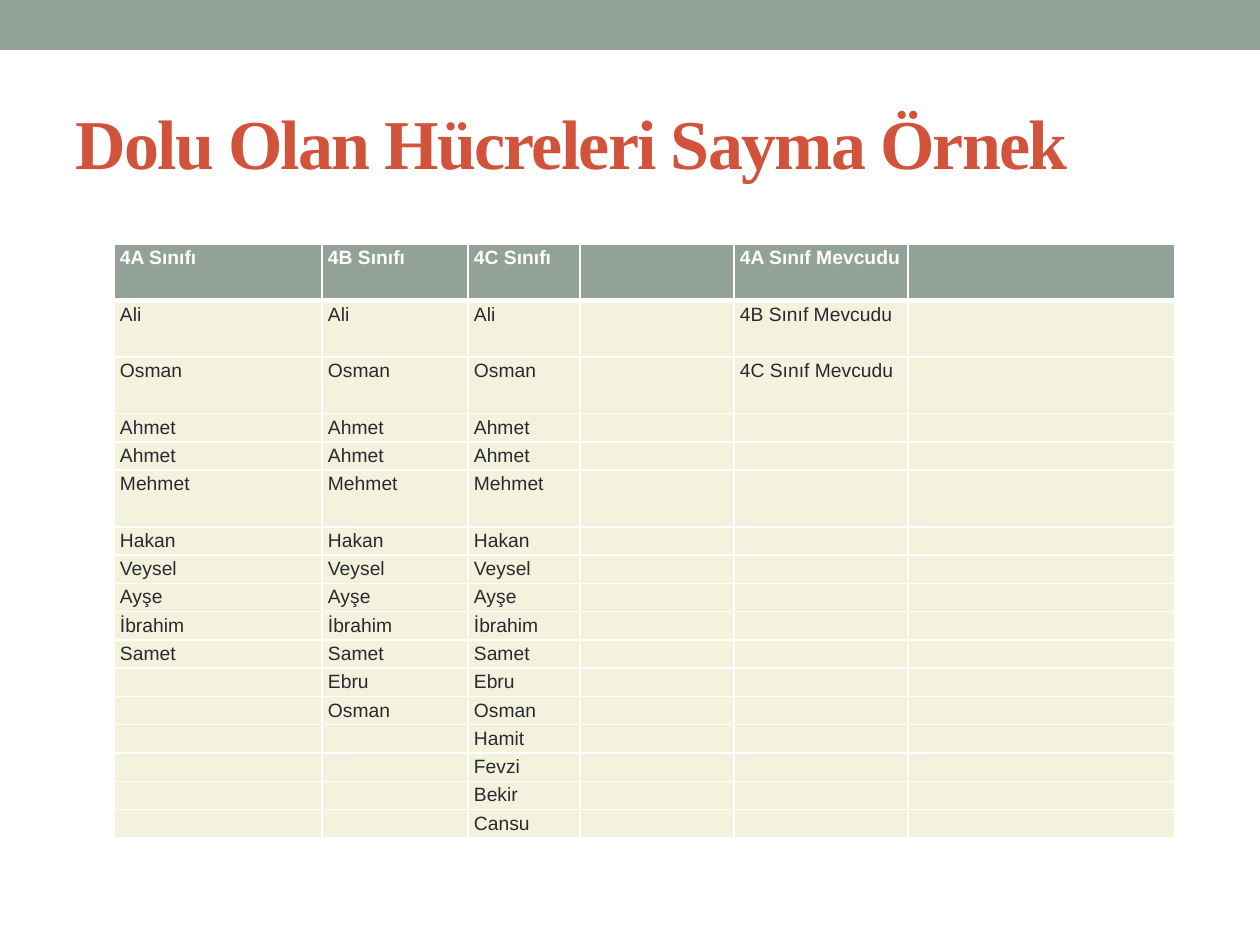
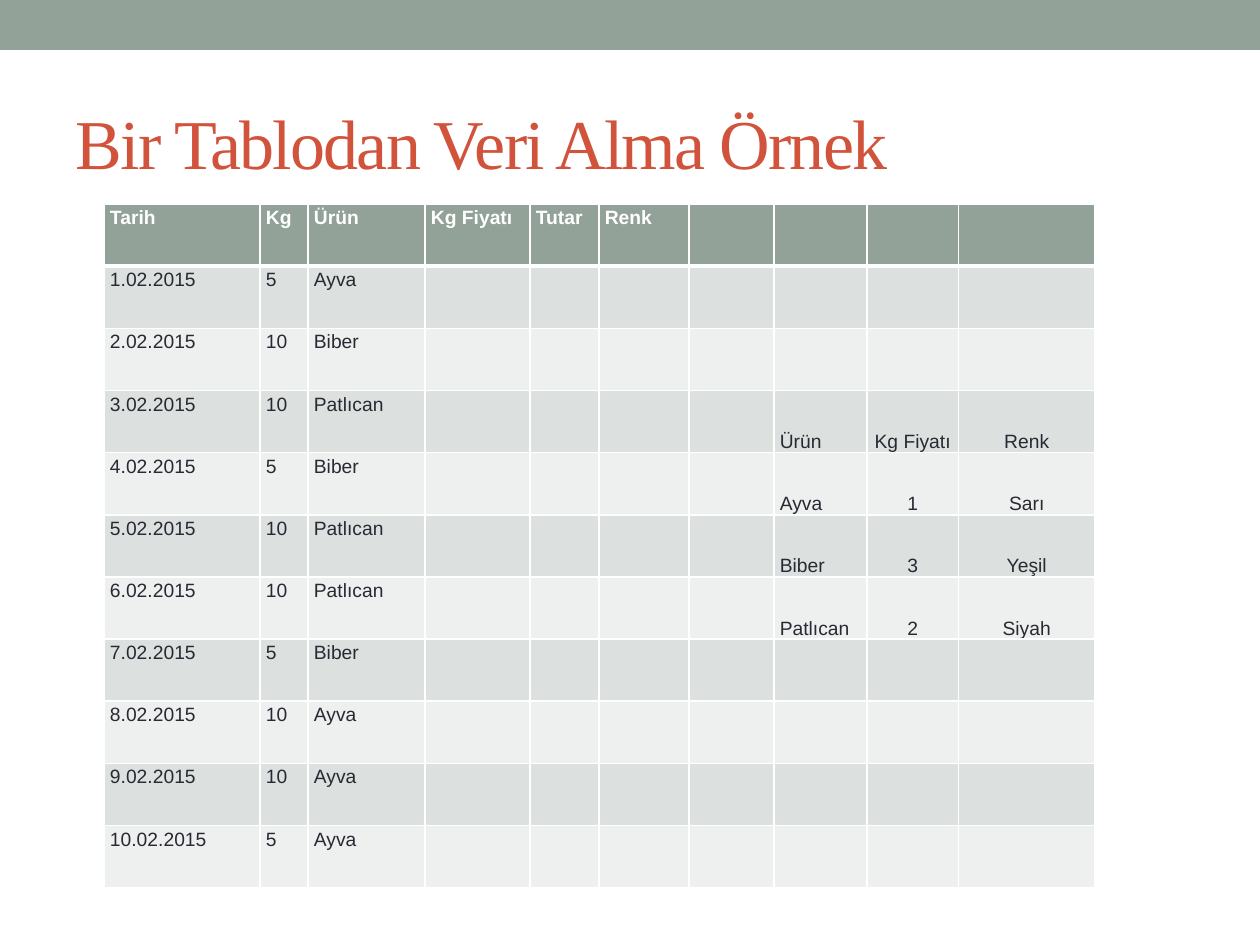
from itertools import zip_longest

from lxml.etree import SubElement
from pptx import Presentation
from pptx.dml.color import RGBColor
from pptx.enum.shapes import MSO_SHAPE
from pptx.enum.text import MSO_ANCHOR, MSO_AUTO_SIZE, PP_ALIGN
from pptx.oxml.ns import qn
from pptx.util import Emu, Pt

SAGE = RGBColor(0x93, 0xA2, 0x99)
RUST = RGBColor(0xD2, 0x53, 0x3C)
INK = RGBColor(0x29, 0x29, 0x34)
WHITE = RGBColor(0xFF, 0xFF, 0xFF)
CREAM = RGBColor(0xF3, 0xF2, 0xDC)
DARK_STRIPE = RGBColor(0xDC, 0xE0, 0xDE)
LIGHT_STRIPE = RGBColor(0xEE, 0xF0, 0xEF)

PIXELS_PER_INCH = 126
PAGE_WIDTH, PAGE_HEIGHT = 1260, 945
TITLE_FONT, TABLE_FONT = "Times New Roman", "Arial"
TITLE_SIZE, TABLE_SIZE = Pt(40), Pt(11)


def px(length):
    return Emu(round(length * 914400 / PIXELS_PER_INCH))


class Page:
    def __init__(self, deck, title, bold=False):
        self.slide = deck.slides.add_slide(deck.slide_layouts[5])
        self.band()
        self.title(title, bold)

    def place(self, shape, left, top, width, height):
        shape.left, shape.top = px(left), px(top)
        shape.width, shape.height = px(width), px(height)

    def style(self, span, font, size, color, bold):
        span.font.name = font
        span.font.size = size
        span.font.color.rgb = color
        span.font.bold = bold

    def band(self):
        band = self.slide.shapes.add_shape(
            MSO_SHAPE.RECTANGLE, 0, 0, px(PAGE_WIDTH), px(50))
        band.shadow.inherit = False
        band.fill.solid()
        band.fill.fore_color.rgb = SAGE
        band.line.fill.background()

    def title(self, text, bold):
        box = self.slide.shapes.title
        self.place(box, 63, 73, 1134, 136)
        frame = box.text_frame
        frame.text = text
        frame.word_wrap = True
        frame.auto_size = MSO_AUTO_SIZE.NONE
        frame.vertical_anchor = MSO_ANCHOR.MIDDLE
        para = frame.paragraphs[0]
        para.alignment = PP_ALIGN.LEFT
        span = para.runs[0]
        self.style(span, TITLE_FONT, TITLE_SIZE, RUST, bold)
        span._r.get_or_add_rPr().set("spc", "-100")

    def table(self, left, top, height, column_widths, row_units, rows, stripes):
        width = sum(column_widths)
        table = self.slide.shapes.add_table(
            len(rows), len(column_widths),
            px(left), px(top), px(width), px(height)).table
        table.horz_banding = False
        for column, column_width in zip(table.columns, column_widths):
            column.width = px(column_width)
        for row, units in zip(table.rows, row_units):
            row.height = px(height * units / sum(row_units))
        for row_index, texts in enumerate(rows):
            for column_index, text in enumerate(texts):
                self.cell(table.cell(row_index, column_index), text, row_index, stripes)
        return table

    def cell(self, cell, text, row_index, stripes):
        header = row_index == 0
        self.borders(cell, top=3 if row_index == 1 else 1, bottom=3 if header else 1)
        cell.fill.solid()
        cell.fill.fore_color.rgb = SAGE if header else stripes[(row_index - 1) % len(stripes)]
        cell.margin_left = cell.margin_right = px(6)
        cell.margin_top = cell.margin_bottom = 0
        para = cell.text_frame.paragraphs[0]
        para.text = text
        para.line_spacing = 1.15
        for span in para.runs:
            self.style(span, TABLE_FONT, TABLE_SIZE, WHITE if header else INK, header)
        if not text:
            SubElement(para._p, qn("a:endParaRPr"), sz=str(int(TABLE_SIZE.pt * 100)))

    def borders(self, cell, top, bottom):
        properties = cell._tc.get_or_add_tcPr()
        for side, points in (("L", 1), ("R", 1), ("T", top), ("B", bottom)):
            line = SubElement(properties, qn(f"a:ln{side}"), w=str(Pt(points)))
            fill = SubElement(line, qn("a:solidFill"))
            SubElement(fill, qn("a:srgbClr"), val=str(WHITE))


def add_class_count_page(deck):
    page = Page(deck, "Dolu Olan Hücreleri Sayma Örnek", bold=True)
    pupils = ["Ali", "Osman", "Ahmet", "Ahmet", "Mehmet", "Hakan", "Veysel", "Ayşe",
              "İbrahim", "Samet", "Ebru", "Osman", "Hamit", "Fevzi", "Bekir", "Cansu"]
    class_sizes = {"4A": 10, "4B": 12, "4C": 16}
    classes = [[f"{name} Sınıfı"] + pupils[:size] for name, size in class_sizes.items()]
    totals = [f"{name} Sınıf Mevcudu" for name in class_sizes]
    rows = list(zip_longest(*classes, [], totals, [], fillvalue=""))
    tall_rows = (0, 1, 2, 5)
    row_units = [2 if index in tall_rows else 1 for index in range(len(rows))]
    page.table(114, 244, 594, [208, 146, 112, 154, 174, 267], row_units, rows, [CREAM])


def add_lookup_page(deck):
    page = Page(deck, "Bir Tablodan Veri Alma Örnek")
    sales = [("5", "Ayva"), ("10", "Biber"), ("10", "Patlıcan"), ("5", "Biber"),
             ("10", "Patlıcan"), ("10", "Patlıcan"), ("5", "Biber"), ("10", "Ayva"),
             ("10", "Ayva"), ("5", "Ayva")]
    prices = [("Ürün", "Kg Fiyatı", "Renk"), ("Ayva", "1", "Sarı"),
              ("Biber", "3", "Yeşil"), ("Patlıcan", "2", "Siyah")]
    first_price_row, first_price_column = 3, 7
    column_widths = [156, 48, 117, 105, 69, 90, 85, 93, 92, 136]
    rows = [["Tarih", "Kg", "Ürün", "Kg Fiyatı", "Tutar", "Renk"] + [""] * 4]
    for day, (kilos, product) in enumerate(sales, 1):
        rows.append([f"{day}.02.2015", kilos, product] + [""] * 7)
    for row, price in zip(rows[first_price_row:], prices):
        row[first_price_column:] = price
    table = page.table(104, 204, 684, column_widths, [1] * len(rows), rows,
                       [DARK_STRIPE, LIGHT_STRIPE])
    for row_index in range(first_price_row, first_price_row + len(prices)):
        for column_index in range(first_price_column, len(column_widths)):
            cell = table.cell(row_index, column_index)
            cell.vertical_anchor = MSO_ANCHOR.BOTTOM
            if column_index > first_price_column:
                cell.text_frame.paragraphs[0].alignment = PP_ALIGN.CENTER


def main():
    deck = Presentation()
    deck.slide_width, deck.slide_height = px(PAGE_WIDTH), px(PAGE_HEIGHT)
    add_class_count_page(deck)
    add_lookup_page(deck)
    deck.save("out.pptx")


if __name__ == "__main__":
    main()
